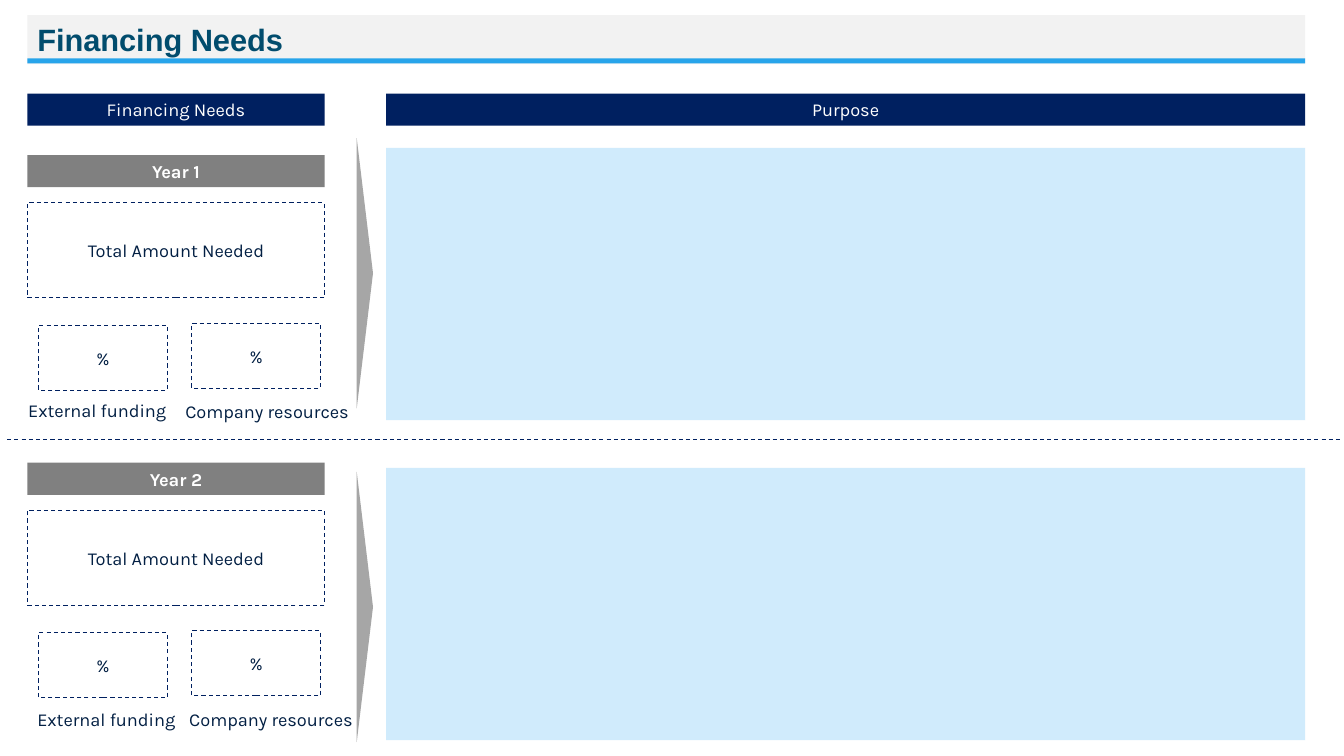
from dataclasses import dataclass

from pptx import Presentation
from pptx.dml.color import RGBColor
from pptx.enum.dml import MSO_LINE_DASH_STYLE as DASH
from pptx.enum.shapes import MSO_CONNECTOR, MSO_SHAPE as SHAPE
from pptx.enum.text import MSO_ANCHOR as ANCHOR, PP_ALIGN as ALIGN
from pptx.oxml.ns import qn
from pptx.util import Cm, Pt
from lxml.etree import SubElement

COLORS = {
    "navy": "002060", "ink": "021F43", "title": "014C6D", "white": "FFFFFF",
    "title_bar": "F2F2F2", "accent": "27A4EA", "year": "808080",
    "panel": "D0EBFC", "arrow": "A6A6A6",
}
LEFT, LEFT_W = 0.69, 7.49
PANEL_LEFT, PANEL_W = 9.73, 23.16
FULL_W = PANEL_LEFT + PANEL_W - LEFT
HEADER_TOP, BAR_H = 2.36, 0.81


@dataclass(frozen=True)
class Source:
    """A share of the funding; the caption position is left, top."""
    name: str
    box_left: float
    box_drop: float
    caption_at: tuple[float, float]
    caption_w: float


@dataclass(frozen=True)
class Year:
    name: str
    top: float
    panel_top: float
    arrow_top: float
    sources: tuple[Source, ...]


def funding(external_at: tuple[float, float],
            company_at: tuple[float, float]) -> tuple[Source, ...]:
    return (Source("External funding", 0.97, 4.29, external_at, 4.14),
            Source("Company resources", 4.83, 4.24, company_at, 4.88))


YEARS = [
    Year("Year 1", 3.91, 3.73, 6.68, funding((0.46, 9.93), (4.42, 9.96))),
    Year("Year 2", 11.66, 11.79, 15.09, funding((0.69, 17.73), (4.52, 17.73))),
]

prs = Presentation()
prs.slide_width, prs.slide_height = Cm(33.87), Cm(19.05)
s = prs.slides.add_slide(prs.slide_layouts[6])


def rgb(name: str) -> RGBColor:
    return RGBColor.from_string(COLORS[name])


def write(sp, text: str, *, color: str = "ink", size: float = 13,
          font: str = "Karla", bold: bool = False, align=ALIGN.CENTER,
          anchor=ANCHOR.MIDDLE) -> None:
    tf = sp.text_frame
    tf.word_wrap = True
    tf.vertical_anchor = anchor
    p = tf.paragraphs[0]
    p.alignment = align
    r = p.add_run()
    r.text = text
    r.font.name, r.font.size, r.font.bold = font, Pt(size), bold
    r.font.color.rgb = rgb(color)


def dash(line) -> None:
    line.color.rgb = rgb("navy")
    line.width = Pt(0.75)
    line.dash_style = DASH.DASH


def filled(x: float, y: float, w: float, h: float, color: str,
           kind=SHAPE.RECTANGLE):
    sp = s.shapes.add_shape(kind, Cm(x), Cm(y), Cm(w), Cm(h))
    sp.shadow.inherit = False
    sp.fill.solid()
    sp.fill.fore_color.rgb = rgb(color)
    sp.line.fill.background()
    return sp


def dashed(x: float, y: float, w: float, h: float, text: str) -> None:
    sp = s.shapes.add_shape(SHAPE.RECTANGLE, Cm(x), Cm(y), Cm(w), Cm(h))
    sp.shadow.inherit = False
    sp.fill.background()
    dash(sp.line)
    write(sp, text)


def draw_year(year: Year) -> None:
    # Amount and its sources
    write(filled(LEFT, year.top, LEFT_W, BAR_H, "year"), year.name,
          color="white", bold=True)
    dashed(LEFT, year.top + 1.2, LEFT_W, 2.39, "Total Amount Needed")
    for source in year.sources:
        dashed(source.box_left, year.top + source.box_drop, 3.25, 1.63, "%")
        x, y = source.caption_at
        caption = s.shapes.add_textbox(Cm(x), Cm(y), Cm(source.caption_w), Cm(0.69))
        write(caption, source.name, align=ALIGN.LEFT, anchor=ANCHOR.TOP)

    # Purpose panel and the arrow to it
    filled(PANEL_LEFT, year.panel_top, PANEL_W, 6.86, "panel")
    arrow = filled(5.79, year.arrow_top, 6.81, 0.41, "arrow",
                   SHAPE.ISOSCELES_TRIANGLE)
    arrow.rotation = 90


# Title bar
write(filled(LEFT, 0.38, FULL_W, 1.24, "title_bar"), "Financing Needs",
      color="title", size=22, font="Arial", bold=True, align=ALIGN.LEFT)
filled(LEFT, 1.47, FULL_W, 0.13, "accent")

# Column headers
for x, w, header in [(LEFT, LEFT_W, "Financing Needs"),
                     (PANEL_LEFT, PANEL_W, "Purpose")]:
    write(filled(x, HEADER_TOP, w, BAR_H, "navy"), header, color="white")

# Years and the divider between them
for year in YEARS:
    draw_year(year)
divider = s.shapes.add_connector(MSO_CONNECTOR.STRAIGHT, Cm(0.18), Cm(11.07),
                                 Cm(33.78), Cm(11.07))
dash(divider.line)
SubElement(divider._element.spPr, qn("a:effectLst"))

prs.save("out.pptx")
